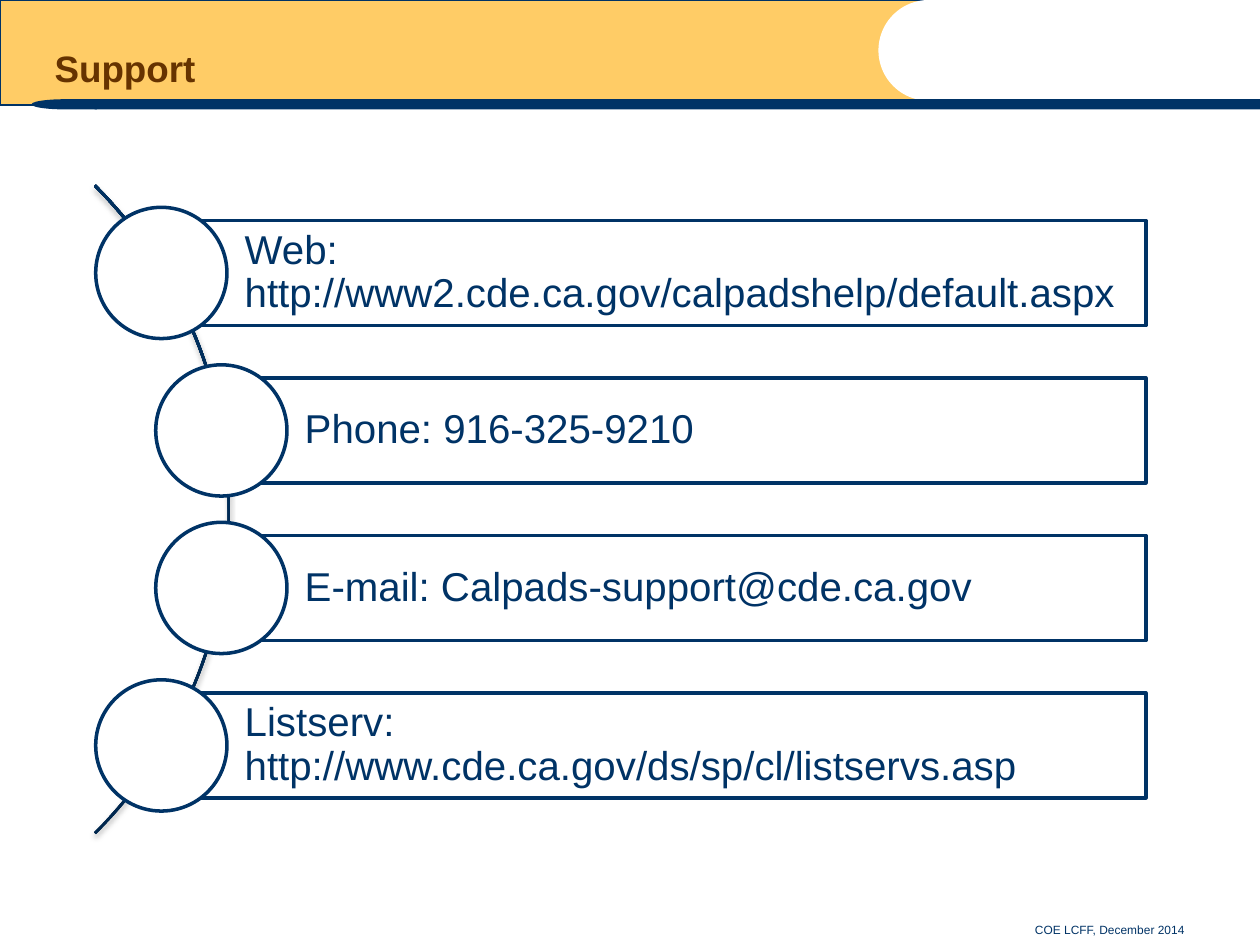
"""Build the support contacts slide."""
from lxml import etree
from pptx import Presentation
from pptx.dml.color import RGBColor
from pptx.enum.shapes import MSO_SHAPE
from pptx.enum.text import MSO_ANCHOR, MSO_AUTO_SIZE, PP_ALIGN
from pptx.oxml.ns import qn
from pptx.util import Pt

RECTANGLE, ROUNDED, OVAL = MSO_SHAPE.RECTANGLE, MSO_SHAPE.ROUNDED_RECTANGLE, MSO_SHAPE.OVAL
DELAY, BLOCK_ARC = MSO_SHAPE.FLOWCHART_DELAY, MSO_SHAPE.BLOCK_ARC
BOTTOM, MIDDLE = MSO_ANCHOR.BOTTOM, MSO_ANCHOR.MIDDLE
LEFT, RIGHT = PP_ALIGN.LEFT, PP_ALIGN.RIGHT
NO_AUTOFIT = MSO_AUTO_SIZE.NONE

NAVY = RGBColor(0x00, 0x33, 0x66)
ARC_START = RGBColor(0x00, 0x26, 0x4C)
ARC_END = RGBColor(0x00, 0x32, 0x63)
GOLD = RGBColor(0xFF, 0xCC, 0x66)
BROWN = RGBColor(0x66, 0x33, 0x00)
WHITE = RGBColor(0xFF, 0xFF, 0xFF)

FONT = "Arial"
OUTER_X, INNER_X = 92.2, 126.5
CONTACTS = [
    ("Web: http://www2.cde.ca.gov/calpadshelp/default.aspx", OUTER_X),
    ("Phone: 916-325-9210", INNER_X),
    ("E-mail: Calpads-support@cde.ca.gov", INNER_X),
    ("Listserv: http://www.cde.ca.gov/ds/sp/cl/listservs.asp", OUTER_X),
]
BAR_RIGHT, BAR_HEIGHT, CIRCLE_SIZE = 654.8, 60, 75
FIRST_CENTRE, CONTACT_PITCH = 156, 90


def add_shape(slide, kind, left, top, width, height, fill, line_width=0):
    """Add a preset shape with a solid fill and an optional navy outline."""
    shape = slide.shapes.add_shape(kind, Pt(left), Pt(top), Pt(width), Pt(height))
    shape.shadow.inherit = False
    shape.fill.solid()
    shape.fill.fore_color.rgb = fill
    if line_width:
        shape.line.color.rgb = NAVY
        shape.line.width = Pt(line_width)
    else:
        shape.line.fill.background()
    return shape


def write_text(shape, text, size, color, anchor, align=LEFT, spacing=1.0, bold=False):
    """Write one formatted run into a shape."""
    frame = shape.text_frame
    frame.word_wrap = True
    frame.auto_size = NO_AUTOFIT
    frame.vertical_anchor = anchor
    para = frame.paragraphs[0]
    para.alignment = align
    para.line_spacing = spacing
    span = para.add_run()
    span.text = text
    span.font.name = FONT
    span.font.size = Pt(size)
    span.font.bold = bold
    span.font.color.rgb = color


def add_header(slide):
    """Draw the gold band with its cut-out and the navy rule below."""
    add_shape(slide, RECTANGLE, 0, 0, 528, 60, GOLD, 0.75)
    add_shape(slide, OVAL, 502, 0, 57.6, 57.6, WHITE)
    rule = add_shape(slide, ROUNDED, 54, 56.7, 666, 5.8, NAVY)
    rule.adjustments[0] = 0
    tip = add_shape(slide, DELAY, 18, 56.7, 37.4, 5.8, NAVY)
    tip._element.spPr.xfrm.set("flipH", "1")


def add_title(slide, text):
    """Place the title placeholder in front of the header band."""
    title = slide.shapes.title
    title.left, title.top, title.width, title.height = Pt(24), Pt(6), Pt(474), Pt(49.5)
    write_text(title, text, 21, BROWN, BOTTOM, spacing=0.9, bold=True)
    slide.shapes._spTree.append(title._element)


def add_arc(slide):
    """Draw the thin shaded arc that links the circles."""
    arc = add_shape(slide, BLOCK_ARC, -393.3, 28.6, 525, 525, NAVY)
    for index, value in enumerate((189, 27, 0.003)):
        arc.adjustments[index] = value
    arc.fill.gradient()
    arc.fill.gradient_angle = 90
    for stop, color in zip(arc.fill.gradient_stops, (ARC_START, ARC_END)):
        stop.color.rgb = color
    effects = arc._element.spPr.find(qn("a:effectLst"))
    shadow = etree.SubElement(effects, qn("a:outerShdw"), blurRad=str(Pt(3.1)),
                              dist=str(Pt(1.8)), dir="5400000", rotWithShape="0")
    black = etree.SubElement(shadow, qn("a:srgbClr"), val="000000")
    etree.SubElement(black, qn("a:alpha"), val="35000")


def add_contact(slide, text, centre_x, centre_y):
    """Add a contact bar with a circle centred on its left edge."""
    bar = add_shape(slide, RECTANGLE, centre_x, centre_y - BAR_HEIGHT / 2,
                    BAR_RIGHT - centre_x, BAR_HEIGHT, WHITE, 2)
    frame = bar.text_frame
    frame.margin_left = Pt(47.6)
    frame.margin_top = frame.margin_right = frame.margin_bottom = Pt(4.6)
    write_text(bar, text, 23, NAVY, MIDDLE, spacing=0.9)
    add_shape(slide, OVAL, centre_x - CIRCLE_SIZE / 2, centre_y - CIRCLE_SIZE / 2,
              CIRCLE_SIZE, CIRCLE_SIZE, WHITE, 2)


def add_footer(slide, text):
    """Add the small right-aligned footer line."""
    box = slide.shapes.add_textbox(Pt(300), Pt(519.4), Pt(384), Pt(19.4))
    write_text(box, text, 6.8, NAVY, BOTTOM, RIGHT)


def main():
    """Build and save the deck."""
    deck = Presentation()
    deck.slide_width, deck.slide_height = Pt(720), Pt(540)
    page = deck.slides.add_slide(deck.slide_layouts[5])
    add_header(page)
    add_title(page, "Support")
    add_arc(page)
    for row, (text, centre_x) in enumerate(CONTACTS):
        add_contact(page, text, centre_x, FIRST_CENTRE + row * CONTACT_PITCH)
    add_footer(page, "COE LCFF, December 2014")
    deck.save("out.pptx")


if __name__ == "__main__":
    main()
